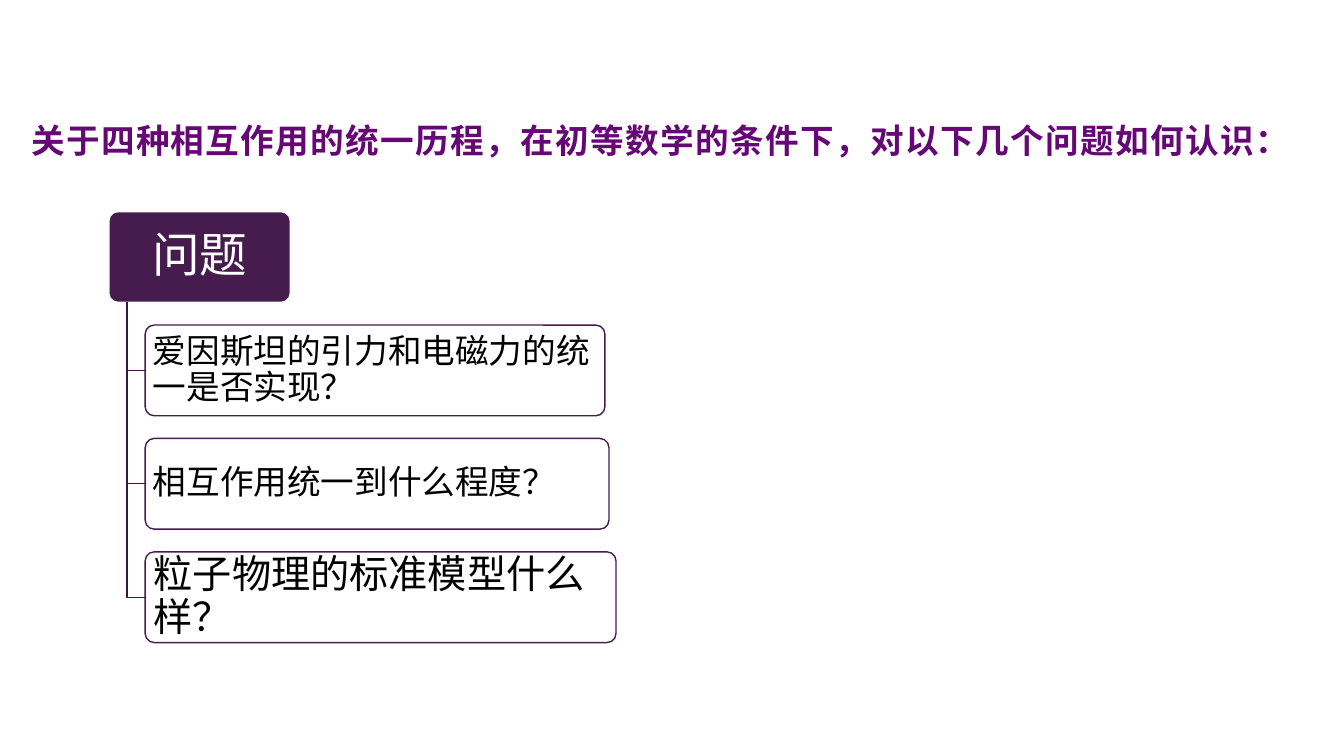
from pptx import Presentation
from pptx.dml.color import RGBColor
from pptx.enum.shapes import MSO_SHAPE
from pptx.enum.text import MSO_ANCHOR, PP_ALIGN
from pptx.util import Inches, Pt

PLUM, EDGE, WHITE = "461B4D", "38163E", "FFFFFF"
TITLE = "关于四种相互作用的统一历程，在初等数学的条件下，对以下几个问题如何认识："
ROOT = "问题"
# text, box width in inches, font size, side and top margins
ITEMS = [
    ("爱因斯坦的引力和电磁力的统一是否实现？", 4.56, 24, (0.05, 0.03)),
    ("相互作用统一到什么程度？", 4.6, 24, (0.05, 0.03)),
    ("粒子物理的标准模型什么样？", 4.67, 28, (0.06, 0.04)),
]


def paint(form, color):
    """Give a fill, line or font one solid colour."""
    if hasattr(form, "solid"):
        form.solid()
        form = form.fore_color
    else:
        form = form.color
    form.rgb = RGBColor.from_string(color)


def write(shape, text, size, color, font="Arial", bold=False, track=0,
          align=PP_ALIGN.LEFT, pad=(0.1, 0.05), lead=None):
    frame = shape.text_frame
    frame.word_wrap = True
    frame.vertical_anchor = MSO_ANCHOR.MIDDLE
    frame.margin_left = frame.margin_right = Inches(pad[0])
    frame.margin_top = frame.margin_bottom = Inches(pad[1])
    para = frame.paragraphs[0]
    para.alignment, para.line_spacing = align, lead
    run = para.add_run()
    run.text = text
    run.font.name, run.font.size, run.font.bold = font, Pt(size), bold
    paint(run.font, color)
    if track:
        run.font._element.set("spc", str(track * 100))


def add_card(slide, left, top, width, height, fill, line):
    card = slide.shapes.add_shape(
        MSO_SHAPE.ROUNDED_RECTANGLE, *map(Inches, (left, top, width, height)))
    card.adjustments[0] = 0.1
    card.shadow.inherit = False
    paint(card.fill, fill)
    paint(card.line, line)
    card.line.width = Pt(1)
    return card


def add_elbow(slide, left, top, right, bottom):
    """Draw a line down, then right."""
    pen = slide.shapes.build_freeform(Inches(left), Inches(top))
    pen.add_line_segments([(Inches(left), Inches(bottom)),
                           (Inches(right), Inches(bottom))], close=False)
    elbow = pen.convert_to_shape()
    elbow.shadow.inherit = False
    elbow.fill.background()
    paint(elbow.line, EDGE)
    elbow.line.width = Pt(1)


def add_title(slide, left, top, width, height):
    box = slide.shapes.add_textbox(*map(Inches, (left, top, width, height)))
    write(box, TITLE, 24, "650876", font="Times New Roman", bold=True, track=1)


def add_tree(slide, left, top, width, height):
    """Place a root card with its items, a quarter card apart, below it."""
    card = add_card(slide, left, top, width, height, PLUM, WHITE)
    write(card, ROOT, 34, WHITE, align=PP_ALIGN.CENTER, pad=(0.07, 0.05), lead=0.9)
    trunk, inner = left + width * 0.1, left + width * 0.2
    for row, (text, wide, size, pad) in enumerate(ITEMS, 1):
        y = top + row * height * 1.25
        add_elbow(slide, trunk, top + height, inner, y + height / 2)
        card = add_card(slide, inner, y, wide, height, WHITE, PLUM)
        write(card, text, size, "000000", pad=pad, lead=0.9)


def main():
    deck = Presentation()
    deck.slide_width, deck.slide_height = Inches(13.33), Inches(7.5)
    slide = deck.slides.add_slide(deck.slide_layouts[6])
    add_title(slide, 0.21, 0.68, 12.36, 1.42)
    add_tree(slide, 1.08, 2.1, 1.8, 0.9)
    deck.save("out.pptx")


if __name__ == "__main__":
    main()
